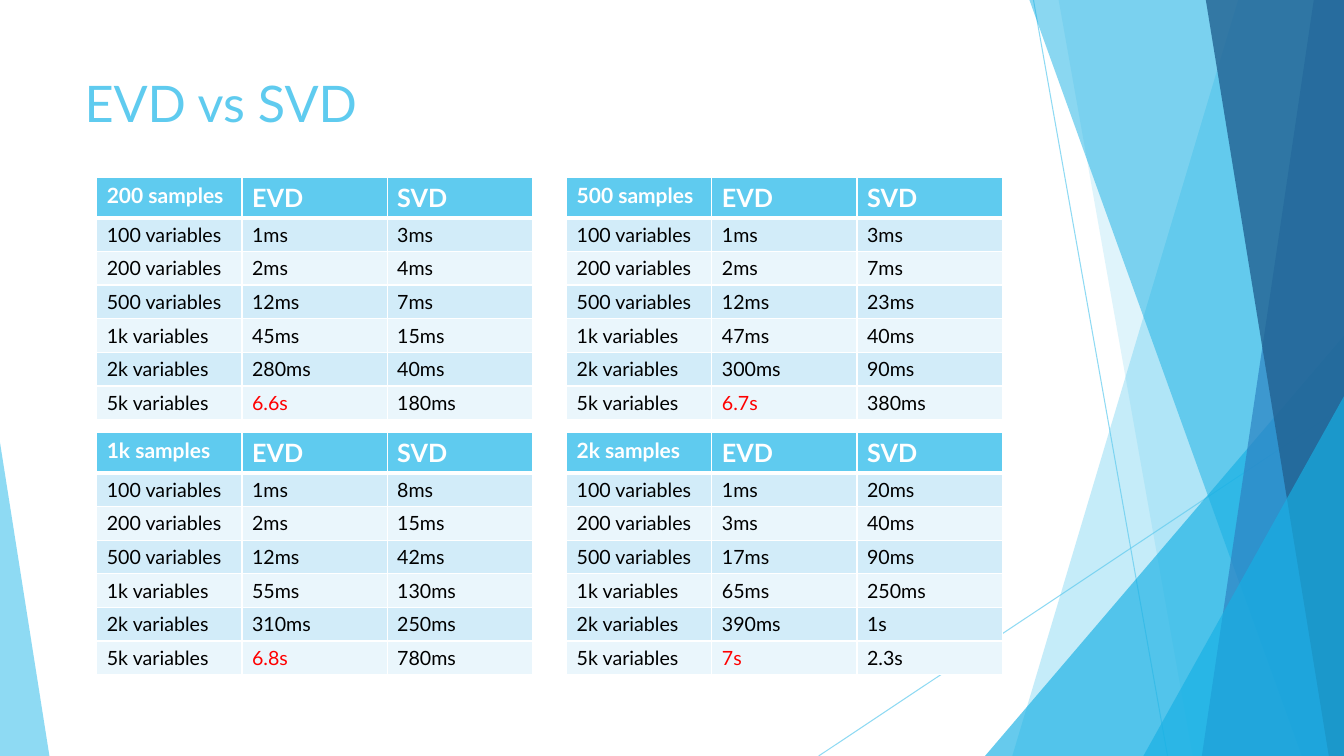
from lxml.etree import SubElement
from pptx import Presentation
from pptx.dml.color import RGBColor
from pptx.enum.shapes import MSO_CONNECTOR as Connector, MSO_SHAPE as Shape
from pptx.oxml.ns import qn
from pptx.util import Inches, Pt

SKY = RGBColor(0x5F, 0xCB, 0xEF)
CYAN = RGBColor(0x17, 0xB0, 0xE4)
BLUE = RGBColor(0x2E, 0x83, 0xC3)
NAVY = RGBColor(0x22, 0x62, 0x92)
BAND_DARK = RGBColor(0xD2, 0xEC, 0xF9)
BAND_LIGHT = RGBColor(0xEA, 0xF6, 0xFC)
WHITE = RGBColor(0xFF, 0xFF, 0xFF)
BLACK = RGBColor(0, 0, 0)
RED = RGBColor(0xFF, 0, 0)

WIDTH, HEIGHT = 13.33, 7.5

# Top left, top right, bottom right and bottom left x, colour, opacity
SHARDS_BEHIND = [
    (12.28, WIDTH, WIDTH, 10.04, SKY, 36),
    (10.5, WIDTH, WIDTH, 11.83, SKY, 20),
]
SHARDS_FRONT = [
    (10.21, WIDTH, WIDTH, 12.91, CYAN, 50),
    (13.03, WIDTH, WIDTH, 11.92, BLUE, 70),
    (11.96, WIDTH, WIDTH, 13.18, NAVY, 80),
]

VARIABLES = ["100", "200", "500", "1k", "2k", "5k"]
# Samples, EVD times, SVD times
TIMINGS = [
    ("200", "1ms 2ms 12ms 45ms 280ms 6.6s", "3ms 4ms 7ms 15ms 40ms 180ms"),
    ("500", "1ms 2ms 12ms 47ms 300ms 6.7s", "3ms 7ms 23ms 40ms 90ms 380ms"),
    ("1k", "1ms 2ms 12ms 55ms 310ms 6.8s", "8ms 15ms 42ms 130ms 250ms 780ms"),
    ("2k", "1ms 3ms 17ms 65ms 390ms 7s", "20ms 40ms 90ms 250ms 1s 2.3s"),
]
TABLE_LEFT, TABLE_TOP = 0.96, 1.76
TABLE_STEP_X, TABLE_STEP_Y = 4.66, 2.53
COLUMN_WIDTH, HEADER_HEIGHT, ROW_HEIGHT = 1.44, 0.4, 0.33


def set_opacity(fill_parent, percent):
    """Make the solid colour directly inside fill_parent translucent."""
    colour = fill_parent.find(qn("a:solidFill"))[0]
    SubElement(colour, qn("a:alpha"), val=str(percent * 1000))


class Deck:
    font = "Lato"

    def __init__(self):
        self.presentation = Presentation()
        self.presentation.slide_width = Inches(WIDTH)
        self.presentation.slide_height = Inches(HEIGHT)
        self.slide = self.presentation.slides.add_slide(self.presentation.slide_layouts[6])
        self.shapes = self.slide.shapes

    def style_run(self, run, size, colour, bold=False):
        run.font.name = self.font
        run.font.size = Pt(size)
        run.font.color.rgb = colour
        run.font.bold = bold

    def paint(self, shape, colour, opacity):
        shape.shadow.inherit = False
        shape.line.fill.background()
        shape.fill.solid()
        shape.fill.fore_color.rgb = colour
        set_opacity(shape.element.spPr, opacity)

    def hairline(self, x1, y1, x2, y2):
        hairline = self.shapes.add_connector(
            Connector.STRAIGHT, Inches(x1), Inches(y1), Inches(x2), Inches(y2))
        hairline.line.color.rgb = SKY
        hairline.line.width = Pt(0.75)
        properties = hairline.element.spPr
        set_opacity(properties.find(qn("a:ln")), 70)
        SubElement(properties, qn("a:effectLst"))

    def shard(self, top_left, top_right, bottom_right, bottom_left, colour, opacity):
        """Draw a four-cornered facet as tall as the slide."""
        outline = self.shapes.build_freeform(Inches(top_left), 0)
        outline.add_line_segments([
            (Inches(top_right), 0),
            (Inches(bottom_right), Inches(HEIGHT)),
            (Inches(bottom_left), Inches(HEIGHT)),
        ], close=True)
        self.paint(outline.convert_to_shape(), colour, opacity)

    def corner(self, left, top, width, apex, colour, opacity):
        """Draw a triangle that stands on the bottom edge of the slide."""
        corner = self.shapes.add_shape(
            Shape.ISOSCELES_TRIANGLE, Inches(left), Inches(top),
            Inches(width), Inches(HEIGHT - top))
        corner.adjustments[0] = apex
        self.paint(corner, colour, opacity)

    def title(self, wording):
        frame = self.shapes.add_textbox(
            Inches(0.74), Inches(0.67), Inches(9.4), Inches(1.44)).text_frame
        frame.word_wrap = True
        frame.text = wording
        self.style_run(frame.paragraphs[0].runs[0], 36, SKY)

    def cell(self, cell, wording, fill, size, colour, bold, top, bottom):
        """Fill one cell; top and bottom are border widths in points."""
        cell.text = wording
        self.style_run(cell.text_frame.paragraphs[0].runs[0], size, colour, bold)
        properties = cell._tc.get_or_add_tcPr()
        for side, points in zip("LRTB", (1, 1, top, bottom)):
            border = SubElement(properties, qn(f"a:ln{side}"), w=str(Pt(points)))
            solid = SubElement(border, qn("a:solidFill"))
            SubElement(solid, qn("a:srgbClr"), val=str(WHITE))
        cell.fill.solid()
        cell.fill.fore_color.rgb = fill

    def timing_table(self, left, top, samples, evd, svd):
        header = (f"{samples} samples", "EVD", "SVD")
        labels = [f"{count} variables" for count in VARIABLES]
        rows = [header, *zip(labels, evd.split(), svd.split())]
        table = self.shapes.add_table(
            len(rows), len(header), Inches(left), Inches(top),
            Inches(COLUMN_WIDTH * len(header)),
            Inches(HEADER_HEIGHT + ROW_HEIGHT * len(labels))).table
        for column in table.columns:
            column.width = Inches(COLUMN_WIDTH)
        for r, row in enumerate(rows):
            table.rows[r].height = Inches(ROW_HEIGHT if r else HEADER_HEIGHT)
            for c, wording in enumerate(row):
                if r == 0:
                    look = (SKY, 18 if c else 15, WHITE, True, 1, 3)
                else:
                    slowest = c == 1 and r == len(labels)
                    look = (BAND_DARK if r % 2 else BAND_LIGHT, 14,
                            RED if slowest else BLACK, False, 3 if r == 1 else 1, 1)
                self.cell(table.cell(r, c), wording, *look)


def main():
    deck = Deck()
    deck.hairline(10.25, 0, 11.58, HEIGHT)
    deck.hairline(WIDTH, 4.03, 8.12, HEIGHT)
    for shard in SHARDS_BEHIND:
        deck.shard(*shard)
    deck.corner(9.77, 3.33, 3.56, 1, CYAN, 66)
    for shard in SHARDS_FRONT:
        deck.shard(*shard)
    deck.corner(11.34, 3.93, 1.99, 1, CYAN, 66)
    deck.corner(0, 4.39, 0.49, 0, SKY, 70)

    deck.title("EVD vs SVD")
    for i, timing in enumerate(TIMINGS):
        row, column = divmod(i, 2)
        deck.timing_table(TABLE_LEFT + column * TABLE_STEP_X,
                          TABLE_TOP + row * TABLE_STEP_Y, *timing)
    deck.presentation.save("out.pptx")


if __name__ == "__main__":
    main()
